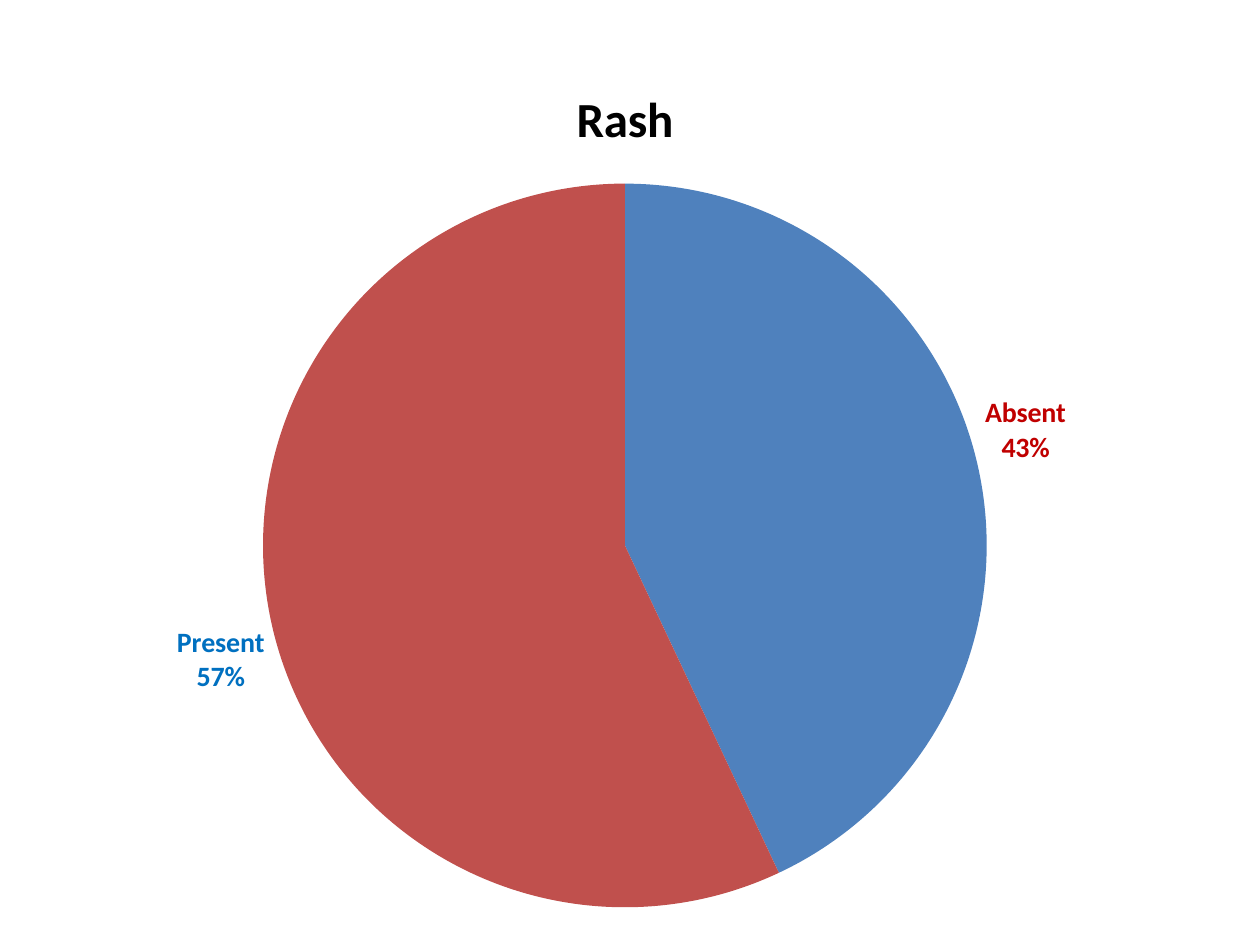
import pptx
import pptx.chart.data
import pptx.dml.color
import pptx.enum.chart
import pptx.oxml
import pptx.oxml.ns
import pptx.util

Inches = pptx.util.Inches

COLORS = {
    "title": "000000",
    "absent": "4F81BD",
    "present": "C0504D",
    "red": "C00000",
    "blue": "0070C0",
}


class Deck:
    face = "Calibri"

    def __init__(self, wide, high):
        self.show = pptx.Presentation()
        self.show.slide_width = Inches(wide)
        self.show.slide_height = Inches(high)
        self.slide = self.show.slides.add_slide(self.show.slide_layouts[6])

    def style(self, font, size, color, bold=True):
        font.name = self.face
        font.size = pptx.util.Pt(size)
        font.bold = bold
        font.color.rgb = pptx.dml.color.RGBColor.from_string(COLORS[color])

    def pie(self, box, title, parts, plot):
        """Each part is (name, value, fill, label color); plot holds chart fractions."""
        data = pptx.chart.data.CategoryChartData()
        data.categories = [part[0] for part in parts]
        data.add_series("Series 1", [part[1] for part in parts])
        kind = pptx.enum.chart.XL_CHART_TYPE.PIE
        chart = self.slide.shapes.add_chart(kind, *map(Inches, box), data).chart
        chart.has_legend = False
        chart.plots[0].vary_by_categories = True
        self.style(chart.font, 10, "title", bold=False)

        # Title
        chart.has_title = True
        chart.chart_title.include_in_layout = False
        run = chart.chart_title.text_frame.paragraphs[0].add_run()
        run.text = title
        self.style(run.font, 28, "title")

        # Shared labels
        series = chart.plots[0].series[0]
        labels = series.data_labels
        labels.show_value = False
        labels.show_category_name = True
        labels.show_percentage = True
        labels.number_format = "0%"
        labels.number_format_is_linked = False
        outer = pptx.enum.chart.XL_LABEL_POSITION.OUTSIDE_END
        labels.position = outer
        self.style(labels.font, 16, parts[0][3])

        # Slices, with own labels where the color differs
        for i, (name, value, fill, ink) in enumerate(parts):
            point = series.points[i]
            point.format.fill.solid()
            rgb = pptx.dml.color.RGBColor.from_string(COLORS[fill])
            point.format.fill.fore_color.rgb = rgb
            if ink != parts[0][3]:
                point.data_label.position = outer
                self.style(point.data_label.font, 16, ink)
        self.tune(chart.element, plot)

    def tune(self, root, plot):
        # Name and percentage on separate lines
        flags = {"showVal": "0", "showCatName": "1", "showPercent": "1"}
        for tag, state in flags.items():
            for node in root.xpath(f".//c:dLbl/c:{tag}"):
                node.set("val", state)
        space = pptx.oxml.ns.nsdecls("c")
        for node in root.xpath(".//c:showBubbleSize"):
            node.addnext(pptx.oxml.parse_xml(f"<c:separator {space}>\n</c:separator>"))

        # Fixed plot place
        area = root.xpath(".//c:plotArea")[0]
        for old in area.xpath("./c:layout"):
            area.remove(old)
        sizes = "".join(f'<c:{key} val="{num}"/>' for key, num in zip("xywh", plot))
        area.insert(0, pptx.oxml.parse_xml(
            f'<c:layout {space}><c:manualLayout><c:layoutTarget val="inner"/>'
            f'<c:xMode val="edge"/><c:yMode val="edge"/>{sizes}'
            "</c:manualLayout></c:layout>"))


def main():
    deck = Deck(10, 7.5)
    deck.pie(
        (0.17, 0.42, 9.58, 6.92),
        "Rash",
        [("Absent", 43, "absent", "red"), ("Present", 57, "present", "blue")],
        (0.2, 0.15, 0.6, 0.83),
    )
    deck.show.save("out.pptx")


if __name__ == "__main__":
    main()
